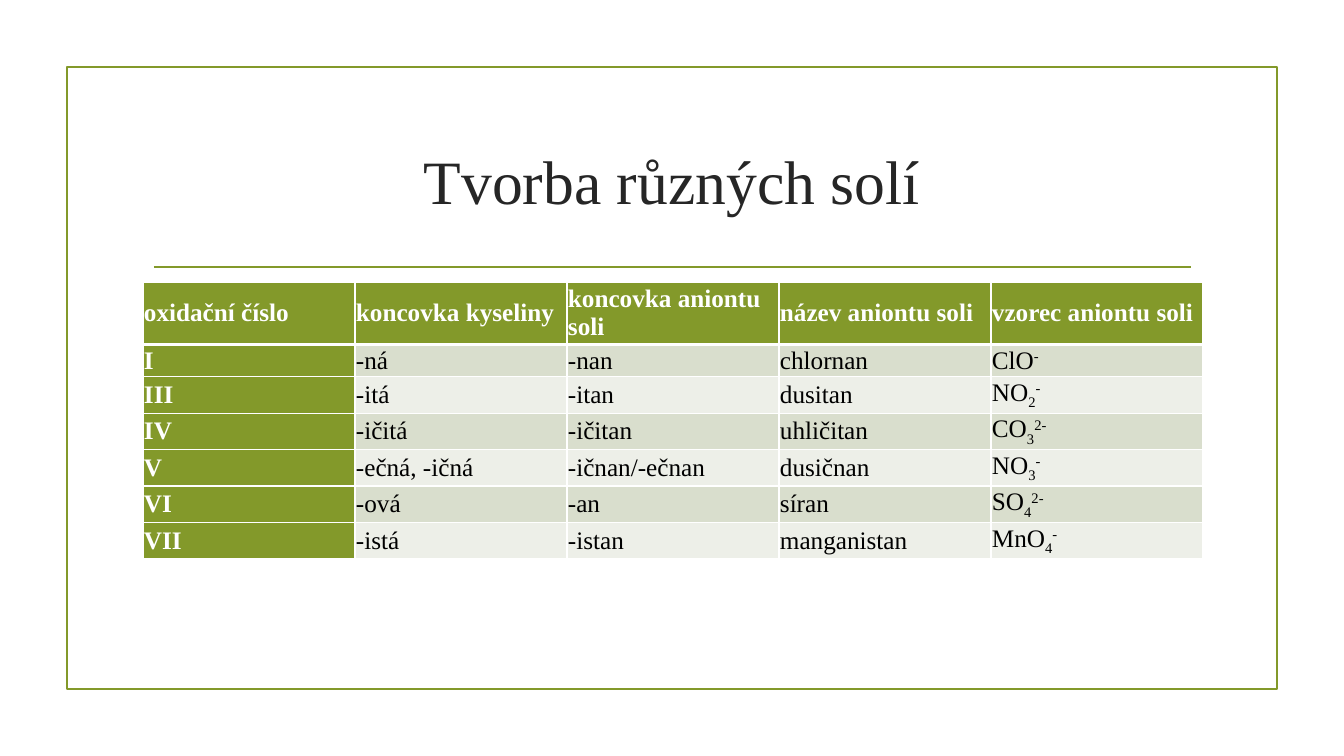
import pptx
import pptx.dml.color
import pptx.enum.shapes
import pptx.enum.text
import pptx.oxml.ns
import pptx.util
from lxml import etree

RGBColor = pptx.dml.color.RGBColor
GREEN = RGBColor(0x83, 0x99, 0x2A)
BAND_DARK = RGBColor(0xD9, 0xDE, 0xCD)
BAND_LIGHT = RGBColor(0xED, 0xEF, 0xE8)
TITLE_GREY = RGBColor(0x26, 0x26, 0x26)
WHITE = RGBColor(0xFF, 0xFF, 0xFF)
BLACK = RGBColor(0x00, 0x00, 0x00)

FONT = "Times New Roman"
EMU_PER_PX = 914400 / 100.8
SUBSCRIPT, SUPERSCRIPT = -25000, 30000

HEADINGS = ["oxidační číslo", "koncovka kyseliny", "koncovka aniontu soli",
            "název aniontu soli", "vzorec aniontu soli"]
# Each formula is (elements, subscript, charge)
SALTS = [
    ("I", "-ná", "-nan", "chlornan", ("ClO", "", "-")),
    ("III", "-itá", "-itan", "dusitan", ("NO", "2", "-")),
    ("IV", "-ičitá", "-ičitan", "uhličitan", ("CO", "3", "2-")),
    ("V", "-ečná, -ičná", "-ičnan/-ečnan", "dusičnan", ("NO", "3", "-")),
    ("VI", "-ová", "-an", "síran", ("SO", "4", "2-")),
    ("VII", "-istá", "-istan", "manganistan", ("MnO", "4", "-")),
]
ROW_HEIGHTS = [58, 29] + [34] * 5
COLUMN_WIDTH = 212


def px(length):
    return pptx.util.Emu(round(length * EMU_PER_PX))


def style_font(font, size, color, bold=False):
    font.name = FONT
    font.size = pptx.util.Pt(size)
    font.bold = bold
    font.color.rgb = color


def add_frame(slide, left, top, width, height):
    frame = slide.shapes.add_shape(pptx.enum.shapes.MSO_SHAPE.RECTANGLE,
                                   px(left), px(top), px(width), px(height))
    frame.shadow.inherit = False
    frame.fill.background()
    frame.line.color.rgb = GREEN
    frame.line.width = pptx.util.Pt(1.25)


def add_rule(slide, left, right, y):
    rule = slide.shapes.add_connector(pptx.enum.shapes.MSO_CONNECTOR.STRAIGHT,
                                      px(left), px(y), px(right), px(y))
    rule.line.color.rgb = GREEN
    rule.line.width = pptx.util.Pt(1.25)
    etree.SubElement(rule._element.spPr, pptx.oxml.ns.qn("a:effectLst"))


def add_title(slide, text, left, top, width, height):
    title = slide.shapes.add_textbox(px(left), px(top), px(width), px(height))
    title_frame = title.text_frame
    title_frame.word_wrap = True
    title_frame.vertical_anchor = pptx.enum.text.MSO_ANCHOR.MIDDLE
    title_frame.text = text
    heading = title_frame.paragraphs[0]
    heading.alignment = pptx.enum.text.PP_ALIGN.CENTER
    style_font(heading.runs[0].font, 44, TITLE_GREY)


def set_borders(cell, top, bottom):
    properties = cell._tc.get_or_add_tcPr()
    for side, points in (("L", 1), ("R", 1), ("T", top), ("B", bottom)):
        border = etree.SubElement(properties, pptx.oxml.ns.qn(f"a:ln{side}"),
                                  w=str(pptx.util.Pt(points)))
        solid = etree.SubElement(border, pptx.oxml.ns.qn("a:solidFill"))
        etree.SubElement(solid, pptx.oxml.ns.qn("a:srgbClr"), val=str(WHITE))


def fill_cell(cell, content, row, column):
    is_heading = row == 0 or column == 0
    # The header is parted from the body by a thicker border
    set_borders(cell, top=3 if row == 1 else 1, bottom=3 if row == 0 else 1)
    cell.fill.solid()
    cell.fill.fore_color.rgb = (GREEN if is_heading
                                else BAND_DARK if row % 2 else BAND_LIGHT)
    cell.vertical_anchor = pptx.enum.text.MSO_ANCHOR.MIDDLE
    cell.margin_left = cell.margin_right = px(1)
    cell.margin_top = cell.margin_bottom = px(1)

    parts = content if isinstance(content, tuple) else (content,)
    paragraph = cell.text_frame.paragraphs[0]
    for part, baseline in zip(parts, (0, SUBSCRIPT, SUPERSCRIPT)):
        if part:
            run = paragraph.add_run()
            run.text = part
            style_font(run.font, 18, WHITE if is_heading else BLACK, is_heading)
            if baseline:
                run.font._element.set("baseline", str(baseline))


def add_salt_table(slide, left, top):
    rows = [HEADINGS] + SALTS
    salt_table = slide.shapes.add_table(
        len(rows), len(HEADINGS), px(left), px(top),
        px(COLUMN_WIDTH * len(HEADINGS)), px(sum(ROW_HEIGHTS))).table
    salt_table.first_col = True
    for column in salt_table.columns:
        column.width = px(COLUMN_WIDTH)
    for row, (contents, height) in enumerate(zip(rows, ROW_HEIGHTS)):
        salt_table.rows[row].height = px(height)
        for column, content in enumerate(contents):
            fill_cell(salt_table.cell(row, column), content, row, column)


def main():
    presentation = pptx.Presentation()
    presentation.slide_width = px(1344)
    presentation.slide_height = px(756)
    slide = presentation.slides.add_slide(presentation.slide_layouts[6])

    # Frame and rule under the title
    add_frame(slide, 67, 67, 1210, 622)
    add_rule(slide, 154, 1191, 267)

    # Title and table of salts
    add_title(slide, "Tvorba různých solí", 143, 108, 1058, 144)
    add_salt_table(slide, 143, 282)

    presentation.save("out.pptx")


if __name__ == "__main__":
    main()
